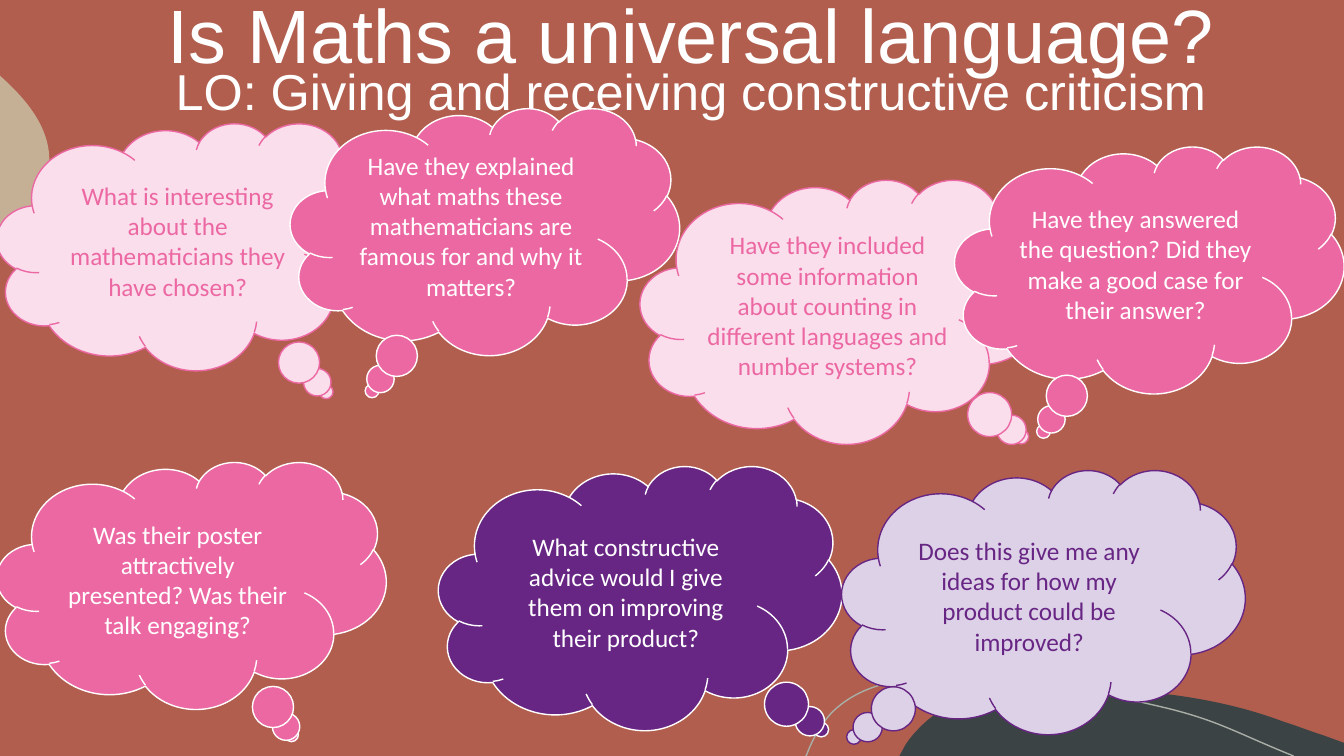
"""Build a slide of thought clouds with questions for giving constructive criticism."""
from lxml.etree import SubElement
from pptx import Presentation
from pptx.dml.color import RGBColor
from pptx.enum.shapes import MSO_SHAPE
from pptx.enum.text import MSO_ANCHOR, PP_ALIGN
from pptx.oxml.ns import qn
from pptx.util import Pt

PX = 9144
THEME = {
    "rust": "B15E4E", "slate": "3B4345", "sand": "C5B096", "grey": "A9AEA7",
    "white": "FFFFFF", "blush": "FADEEC", "pink": "EC68A3",
    "purple": "682684", "lilac": "DDD1E8",
    "title_font": "Arial", "cloud_font": "Calibri",
    "title": 54, "subtitle": 36, "cloud": 18, "line": 1,
}


def color(name):
    return RGBColor.from_string(THEME[name])


def add_curved(shapes, start, segments, closed):
    fb = shapes.build_freeform(*start, scale=PX)
    fb.add_line_segments([point for seg in segments for point in seg], close=closed)
    sp = fb.convert_to_shape()
    steps = iter(list(sp._element.iter(qn("a:lnTo"))))
    for seg in segments:
        first, *others = [next(steps) for _ in seg]
        if others:
            outline = first.getparent()
            curve = SubElement(outline, qn("a:cubicBezTo"))
            outline.replace(first, curve)
            for step in (first, *others):
                curve.append(step[0])
            for step in others:
                outline.remove(step)
    return sp


prs = Presentation()
prs.slide_width, prs.slide_height = 1333 * PX, 750 * PX
s = prs.slides.add_slide(prs.slide_layouts[6])
s.background.fill.solid()
s.background.fill.fore_color.rgb = color("rust")

hill = [
    [(1128, 683), (1204, 690), (1273, 716)],
    [(1286, 720), (1298, 725), (1311, 729)],
    [(1333, 737)], [(1333, 750)], [(892, 750)], [(898, 739)],
    [(902, 733), (906, 728), (911, 723)],
    [(939, 693), (982, 684), (1023, 683)],
    [(1033, 683), (1043, 683), (1054, 683)],
]
pebble = [
    [(1, 76)],
    [(30, 102), (54, 133), (48, 170)],
    [(46, 187), (37, 203), (27, 218)],
    [(24, 224), (17, 233), (8, 244)],
    [(0, 254)],
]
swoosh = [
    [(800, 749)],
    [(806, 733), (814, 719), (824, 708)],
    [(850, 681), (889, 673), (926, 672)],
    [(955, 672)],
    [(1022, 672), (1100, 689), (1155, 702)],
    [(1209, 715), (1226, 727), (1283, 750)],
]
for start, segments, fill, line in (((1054, 683), hill, "slate", None),
                                    ((0, 75), pebble, "sand", None),
                                    ((799, 750), swoosh, None, "grey")):
    sp = add_curved(s.shapes, start, segments, closed=fill is not None)
    sp.shadow.inherit = False
    if fill:
        sp.fill.solid()
        sp.fill.fore_color.rgb = color(fill)
        sp.line.fill.background()
    else:
        sp.fill.background()
        sp.line.color.rgb = color(line)
        sp.line.width = Pt(THEME["line"])

heading = s.shapes.add_textbox(102 * PX, -122 * PX, 1167 * PX, 245 * PX)
tf = heading.text_frame
tf.word_wrap = True
tf.vertical_anchor = MSO_ANCHOR.BOTTOM
tf.text = "Is Maths a universal language?\nLO: Giving and receiving constructive criticism"
for p, size in zip(tf.paragraphs, ("title", "subtitle")):
    p.alignment = PP_ALIGN.CENTER
    p.line_spacing = 0.7
    r = p.runs[0]
    r.font.size = Pt(THEME[size])
    r.font.name = THEME["title_font"]
    r.font.color.rgb = color("white")

SMALL, LARGE = (386, 245), (400, 262)
STYLES = {
    "blush": ("blush", "pink", "pink"),
    "pink": ("pink", "white", "white"),
    "purple": ("purple", "white", "white"),
    "lilac": ("lilac", "purple", "purple"),
}
clouds = [
    (-3, 122, SMALL, (0.346, 0.589), "blush",
     "What is interesting about the mathematicians they have chosen?"),
    (288, 107, SMALL, (-0.29, 0.646), "pink",
     "Have they explained what maths these mathematicians are famous for and why it matters?"),
    (635, 178, LARGE, (0.445, 0.474), "blush",
     "Have they included some information about counting in different languages and number systems?"),
    (947, 145, SMALL, (-0.272, 0.655), "pink",
     "Have they answered the question? Did they make a good case for their answer?"),
    (-3, 458, SMALL, (0.257, 0.606), "pink",
     "Was their poster attractively presented? Was their talk engaging?"),
    (435, 462, LARGE, (0.449, 0.499), "purple",
     "What constructive advice would I give them on improving their product?"),
    (835, 466, LARGE, (-0.47, 0.512), "lilac",
     "Does this give me any ideas for how my product could be improved?"),
]
for x, y, (w, h), tail, style, question in clouds:
    fill, line, ink = STYLES[style]
    sp = s.shapes.add_shape(MSO_SHAPE.CLOUD_CALLOUT, x * PX, y * PX, w * PX, h * PX)
    sp.shadow.inherit = False
    sp.adjustments[0], sp.adjustments[1] = tail
    sp.fill.solid()
    sp.fill.fore_color.rgb = color(fill)
    sp.line.color.rgb = color(line)
    sp.line.width = Pt(THEME["line"])
    tf = sp.text_frame
    tf.word_wrap = True
    tf.vertical_anchor = MSO_ANCHOR.MIDDLE
    tf.text = question
    p = tf.paragraphs[0]
    p.alignment = PP_ALIGN.CENTER
    r = p.runs[0]
    r.font.size = Pt(THEME["cloud"])
    r.font.name = THEME["cloud_font"]
    r.font.color.rgb = color(ink)

prs.save("out.pptx")
